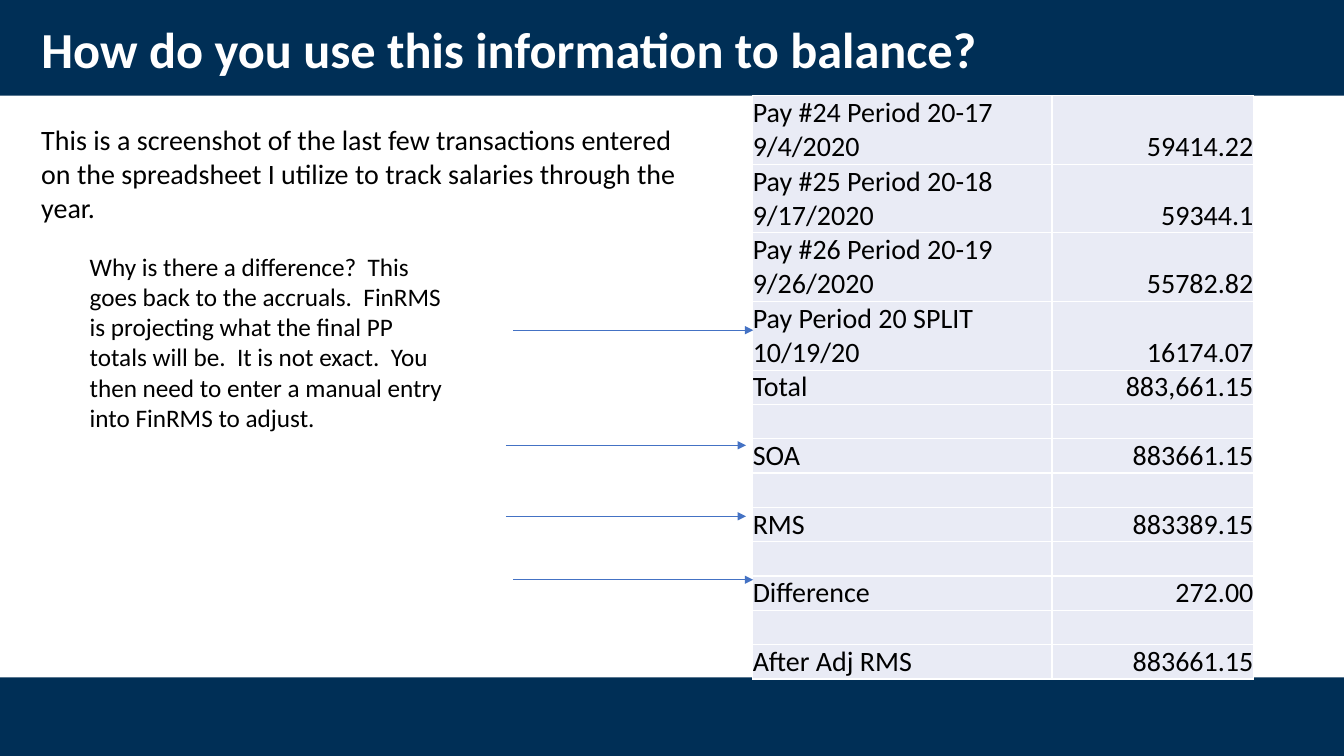
import pptx
import pptx.dml.color
import pptx.enum.shapes
import pptx.enum.text
import pptx.oxml
import pptx.oxml.ns
import pptx.util
from pptx.util import Cm

NAVY, WHITE, BLACK, BLUE, PALE = "002F56", "FFFFFF", "000000", "4472C4", "E9EBF5"
ALIGN = pptx.enum.text.PP_ALIGN
ANCHOR = pptx.enum.text.MSO_ANCHOR
SLIDE_WIDTH, SLIDE_HEIGHT = 33.87, 19.05

BALANCE_ROWS = [
    ("Pay #24 Period 20-17 9/4/2020", "59414.22"),
    ("Pay #25 Period 20-18 9/17/2020", "59344.1"),
    ("Pay #26 Period 20-19 9/26/2020", "55782.82"),
    ("Pay Period 20 SPLIT 10/19/20", "16174.07"),
    ("Total", "883,661.15"),
    ("", ""),
    ("SOA", "883661.15"),
    ("", ""),
    ("RMS", "883389.15"),
    ("", ""),
    ("Difference", "272.00"),
    ("", ""),
    ("After Adj RMS", "883661.15"),
]
TWO_LINE_ROWS = 4
LINE_HEIGHT = 0.86


def color(value):
    return pptx.dml.color.RGBColor.from_string(value)


class SlideBuilder:
    """Holds the text style and the current page; lengths are centimetres."""

    font_name = "Calibri"

    def __init__(self, page):
        self.page = page

    def style(self, paragraph, size, text_color=BLACK, bold=False, align=ALIGN.LEFT):
        paragraph.alignment = align
        font = paragraph.font
        font.name, font.size, font.bold = self.font_name, pptx.util.Pt(size), bold
        font.color.rgb = color(text_color)

    def band(self, top, height):
        """Add a full-width bar behind everything else."""
        bar = self.page.shapes.add_shape(
            pptx.enum.shapes.MSO_SHAPE.RECTANGLE, 0, Cm(top), Cm(SLIDE_WIDTH), Cm(height))
        bar.shadow.inherit = False
        bar.fill.solid()
        bar.fill.fore_color.rgb = color(NAVY)
        bar.line.fill.background()
        self.page.shapes._spTree.insert(2, bar._element)

    def title(self, text, left, top, width, height):
        title = self.page.shapes.title
        title.left, title.top, title.width, title.height = map(Cm, (left, top, width, height))
        frame = title.text_frame
        frame.text = text
        frame.vertical_anchor = ANCHOR.MIDDLE
        paragraph = frame.paragraphs[0]
        paragraph.line_spacing = 0.9
        self.style(paragraph, 36, WHITE, bold=True)

    def text(self, text, left, top, width, height, size):
        box = self.page.shapes.add_textbox(*map(Cm, (left, top, width, height)))
        frame = box.text_frame
        frame.word_wrap = True
        frame.text = text
        self.style(frame.paragraphs[0], size)

    def table(self, rows, left, top, widths):
        heights = [LINE_HEIGHT * (2 if index < TWO_LINE_ROWS else 1)
                   for index in range(len(rows))]
        table = self.page.shapes.add_table(
            len(rows), len(widths), Cm(left), Cm(top), Cm(sum(widths)), Cm(sum(heights))).table
        table.first_row = table.horz_banding = False
        for column, width in zip(table.columns, widths):
            column.width = Cm(width)
        for row, height, texts in zip(table.rows, heights, rows):
            row.height = Cm(height)
            for cell, text, align in zip(row.cells, texts, (ALIGN.LEFT, ALIGN.RIGHT)):
                cell.text = text
                cell.vertical_anchor = ANCHOR.BOTTOM
                cell.margin_left = cell.margin_right = 0
                cell.margin_top = cell.margin_bottom = 0
                cell.fill.solid()
                cell.fill.fore_color.rgb = color(PALE)
                self.style(cell.text_frame.paragraphs[0], 20, align=align)

    def arrow(self, left, top, length):
        arrow = self.page.shapes.add_connector(
            pptx.enum.shapes.MSO_CONNECTOR.STRAIGHT,
            Cm(left), Cm(top), Cm(left + length), Cm(top))
        arrow.line.color.rgb = color(BLUE)
        arrow.line.width = pptx.util.Pt(0.5)
        namespace = pptx.oxml.ns.nsdecls("a")
        arrow.line._get_or_add_ln().append(
            pptx.oxml.parse_xml(f'<a:tailEnd {namespace} type="triangle"/>'))
        arrow._element.spPr.append(pptx.oxml.parse_xml(f"<a:effectLst {namespace}/>"))


def main():
    deck = pptx.Presentation()
    deck.slide_width, deck.slide_height = Cm(SLIDE_WIDTH), Cm(SLIDE_HEIGHT)
    builder = SlideBuilder(deck.slides.add_slide(deck.slide_layouts[5]))

    builder.band(0, 2.41)
    builder.band(17.07, SLIDE_HEIGHT - 17.07)
    builder.title("How do you use this information to balance?", 0.79, 0.46, 29.21, 1.73)
    builder.table(BALANCE_ROWS, 18.97, 2.41, (7.54, 5.08))
    builder.text(
        "This is a screenshot of the last few transactions entered on the spreadsheet "
        "I utilize to track salaries through the year.", 0.79, 2.97, 16.69, 2.82, 20)
    for left, top in ((12.93, 8.32), (12.75, 11.22), (12.75, 13.01), (12.93, 14.61)):
        builder.arrow(left, top, 6.05)
    builder.text(
        "Why is there a difference?  This goes back to the accruals.  FinRMS is projecting "
        "what the final PP totals will be.  It is not exact.  You then need to enter a "
        "manual entry into FinRMS to adjust.", 2.01, 6.2, 9.53, 5.64, 18)
    deck.save("out.pptx")


if __name__ == "__main__":
    main()
